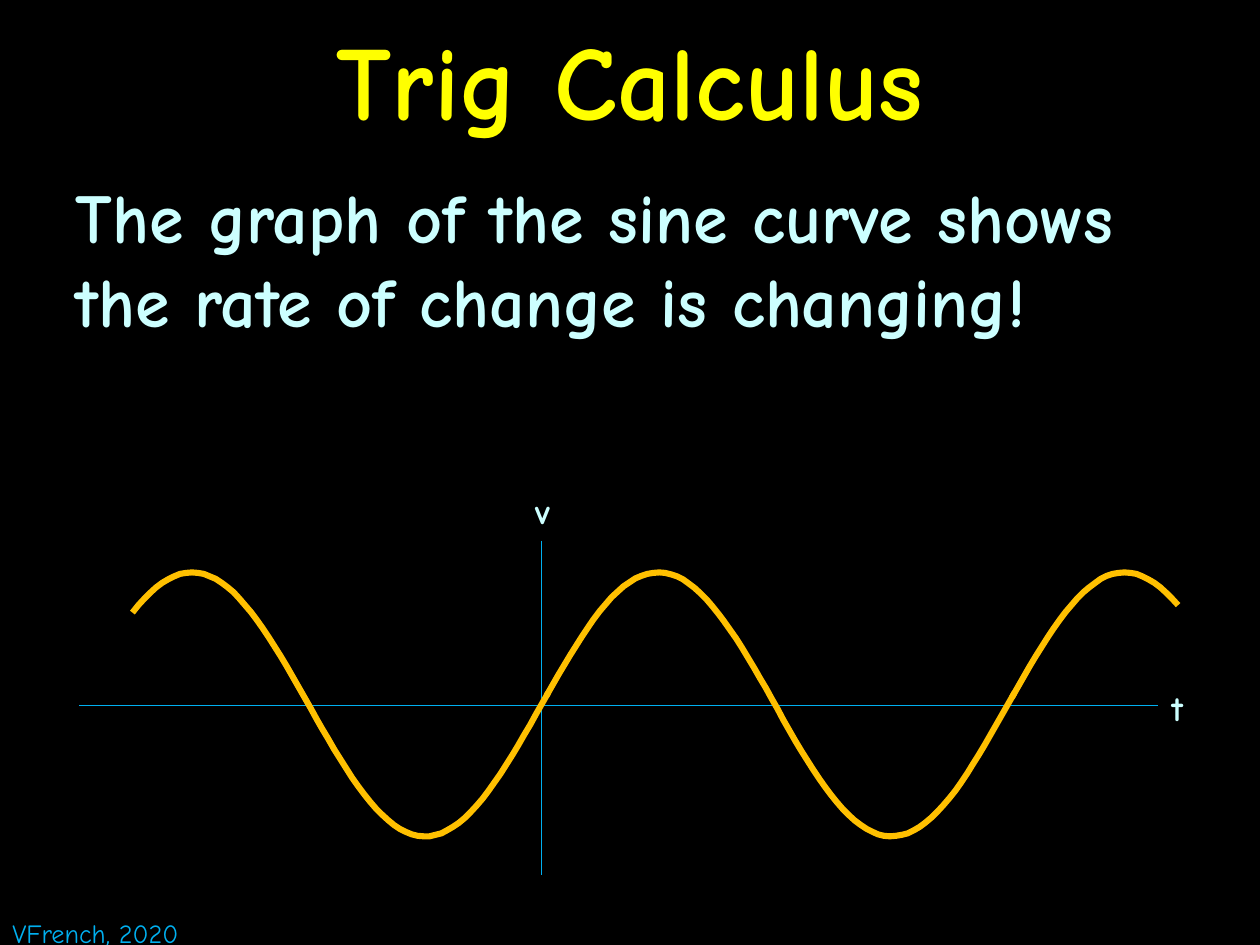
import math
from dataclasses import dataclass

from lxml import etree
from pptx import Presentation, util as u
from pptx.dml.color import RGBColor
from pptx.enum import shapes, text
from pptx.oxml import ns

FONT = "Comic Neue"
BLACK, YELLOW, PALE, BLUE, ORANGE = "000000", "FFFF00", "CCFFFF", "00B0F0", "FFC000"

# Sine wave, in cm
ORIGIN_X, CENTRE_Y = 10.92, 14.2
AMPLITUDE, PERIOD = 2.66, 9.4
STEP = 0.12
UNITS_PER_CM = 100


@dataclass
class Label:
    content: str
    left: float
    top: float
    width: float
    height: float
    size: int = 20
    color: str = PALE
    bold: bool = True
    wrap: bool = True


@dataclass
class Axis:
    start: tuple[float, float]
    end: tuple[float, float]


@dataclass
class WavePart:
    start: float
    end: float


LABELS = [
    Label("t", 23.37, 13.72, 0.84, 1.12),
    Label("v", 10.54, 9.75, 1.09, 1.12),
]
CREDIT = Label("VFrench, 2020", 0, 18.36, 4.37, 0.89,
               size=15, color=BLUE, bold=False, wrap=False)
AXES = [
    Axis((ORIGIN_X, 10.9), (ORIGIN_X, 17.63)),
    Axis((23.34, 14.22), (1.6, 14.22)),
]
WAVE_PARTS = [
    WavePart(11.02, 20.45),
    WavePart(2.67, 11.05),
    WavePart(20.4, 23.75),
]


def rgb(value: str) -> RGBColor:
    return RGBColor.from_string(value)


def write(frame, content: str, *, size: int, color: str, bold: bool = True,
          align=text.PP_ALIGN.LEFT, anchor=text.MSO_ANCHOR.TOP,
          auto_size=text.MSO_AUTO_SIZE.NONE, wrap: bool = True):
    frame.word_wrap = wrap
    frame.auto_size = auto_size
    frame.vertical_anchor = anchor
    paragraph = frame.paragraphs[0]
    paragraph.alignment = align
    run = paragraph.add_run()
    run.text = content
    run.font.name = FONT
    run.font.size = u.Pt(size)
    run.font.bold = bold
    run.font.color.rgb = rgb(color)
    return paragraph


def place(shape, left: float, top: float, width: float, height: float) -> None:
    shape.left, shape.top = u.Cm(left), u.Cm(top)
    shape.width, shape.height = u.Cm(width), u.Cm(height)


def draw_label(parent, label: Label) -> None:
    box = parent.add_textbox(u.Cm(label.left), u.Cm(label.top),
                             u.Cm(label.width), u.Cm(label.height))
    write(box.text_frame, label.content, size=label.size, color=label.color,
          bold=label.bold, wrap=label.wrap,
          auto_size=text.MSO_AUTO_SIZE.SHAPE_TO_FIT_TEXT)


def draw_axis(parent, axis: Axis) -> None:
    line = parent.add_connector(shapes.MSO_CONNECTOR.STRAIGHT,
                                *map(u.Cm, axis.start + axis.end))
    line.line.color.rgb = rgb(BLUE)
    line.line.width = u.Pt(0.75)
    etree.SubElement(line._element.spPr, ns.qn("a:effectLst"))


def wave_point(x: float) -> tuple[float, float]:
    y = CENTRE_Y - AMPLITUDE * math.sin(math.tau * (x - ORIGIN_X) / PERIOD)
    return x * UNITS_PER_CM, y * UNITS_PER_CM


def draw_wave(parent, part: WavePart) -> None:
    count = round((part.end - part.start) / STEP)
    points = [wave_point(part.start + (part.end - part.start) * i / count)
              for i in range(count + 1)]
    builder = parent.build_freeform(*points[0], scale=u.Cm(1) / UNITS_PER_CM)
    builder.add_line_segments(points[1:], close=False)
    curve = builder.convert_to_shape()
    curve.shadow.inherit = False
    curve.fill.background()
    curve.line.color.rgb = rgb(ORANGE)
    curve.line.width = u.Pt(3.5)


def main() -> None:
    presentation = Presentation()
    presentation.slide_width, presentation.slide_height = u.Cm(25.4), u.Cm(19.05)
    slide = presentation.slides.add_slide(presentation.slide_layouts[1])
    slide.background.fill.solid()
    slide.background.fill.fore_color.rgb = rgb(BLACK)

    # Title
    title = slide.shapes.title
    place(title, 0, 0, 25.4, 3.18)
    write(title.text_frame, "Trig Calculus", size=60, color=YELLOW,
          align=text.PP_ALIGN.CENTER, anchor=text.MSO_ANCHOR.MIDDLE)

    # Statement, without bullet or indent
    body = slide.placeholders[1]
    place(body, 1.27, 3.38, 22.86, 15.67)
    paragraph = write(
        body.text_frame,
        "The graph of the sine curve shows the rate of change is changing!",
        size=40, color=PALE)
    properties = paragraph._p.get_or_add_pPr()
    properties.set("marL", "0")
    properties.set("indent", "0")
    etree.SubElement(properties, ns.qn("a:buNone"))

    # Graph
    graph = slide.shapes.add_group_shape().shapes
    for axis in AXES:
        draw_axis(graph, axis)
    for part in WAVE_PARTS:
        draw_wave(graph, part)
    for label in LABELS:
        draw_label(graph, label)

    # Credit
    draw_label(slide.shapes, CREDIT)

    presentation.save("out.pptx")


if __name__ == "__main__":
    main()
